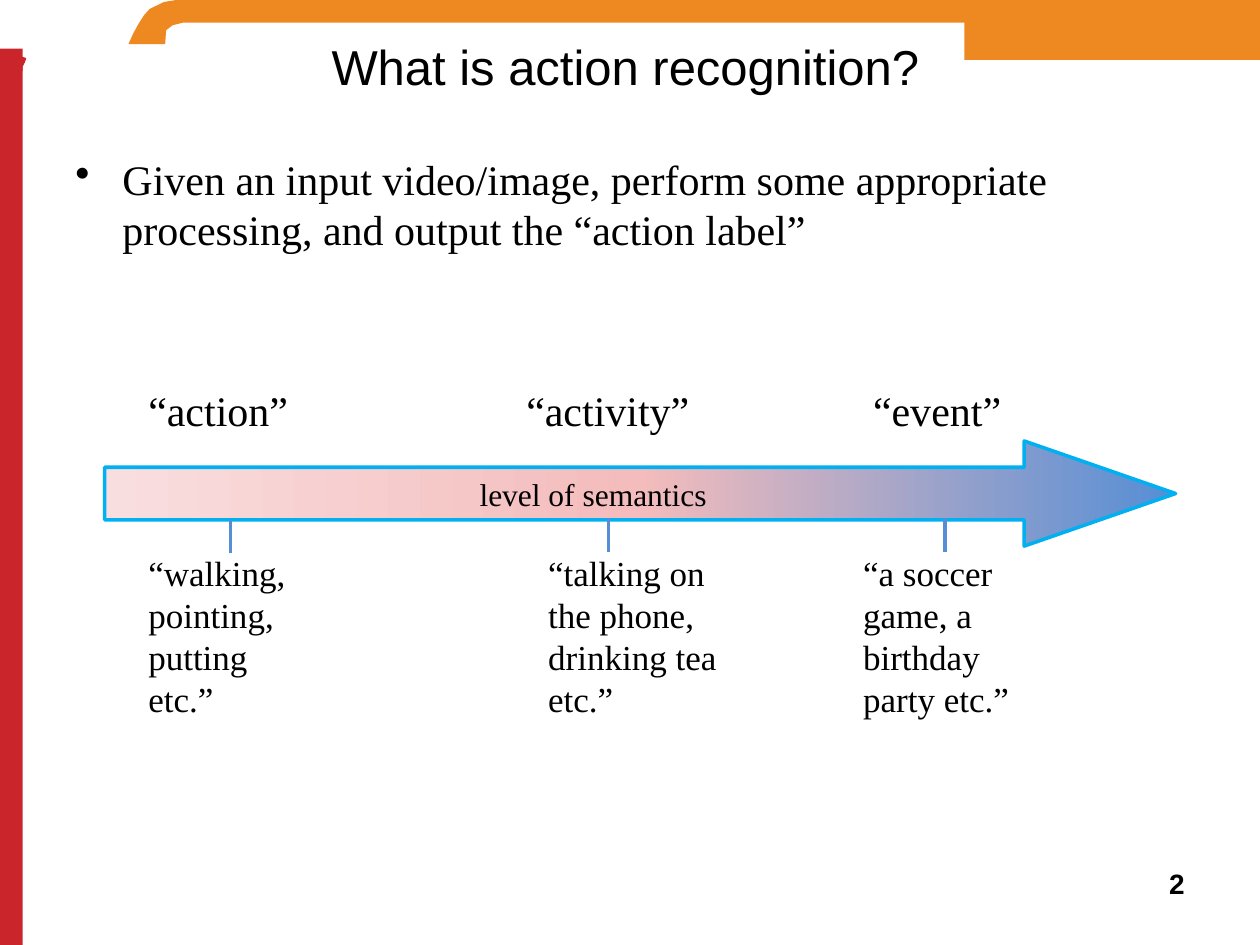
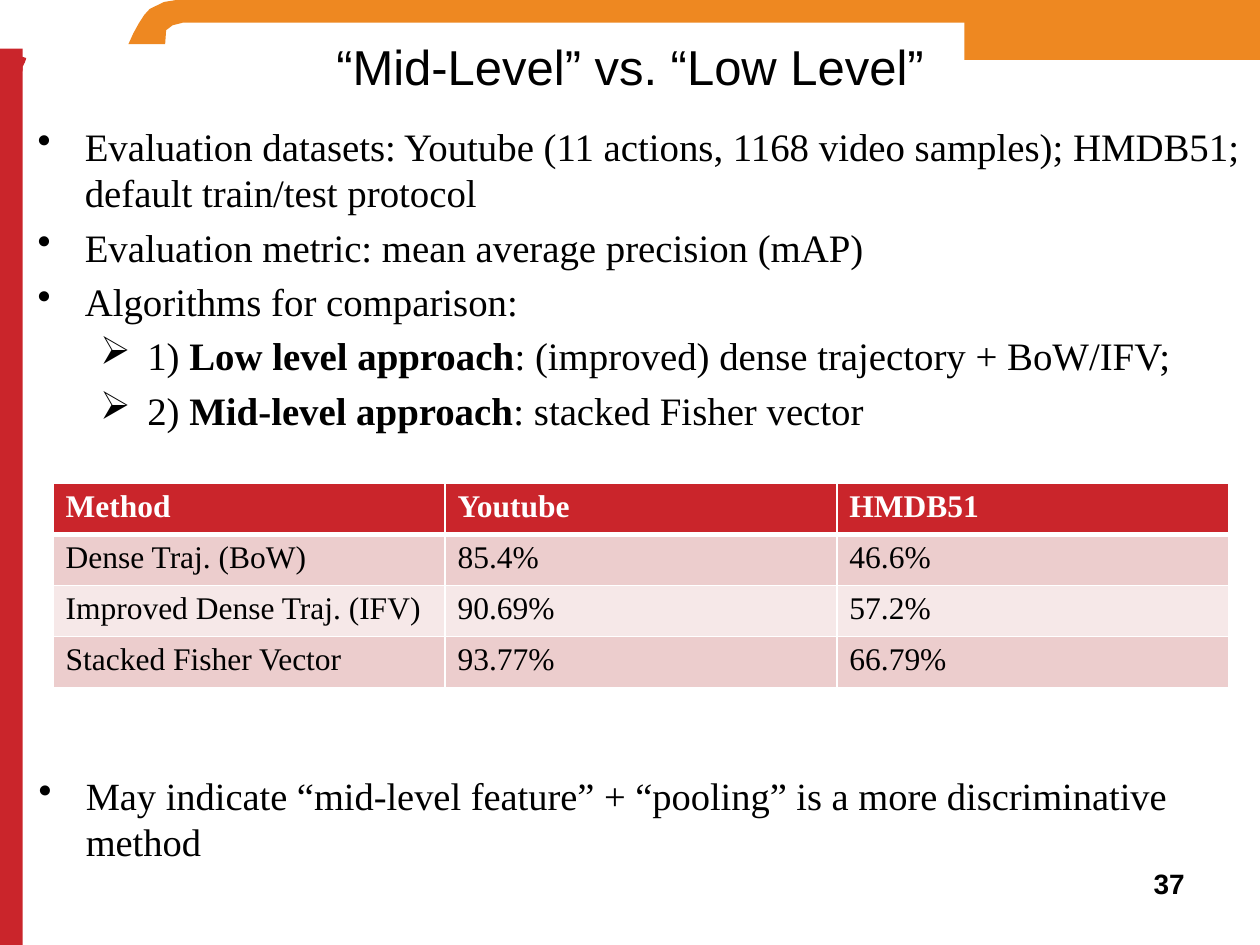
"""Build two slides on action recognition."""
from copy import deepcopy

from lxml import etree
from pptx import Presentation, util as u
from pptx.dml.color import RGBColor
from pptx.enum import shapes as sh, text as tx
from pptx.oxml.ns import qn

HUES = {"orange": "EE8821", "red": "CA252B", "white": "FFFFFF", "black": "000000",
        "blue": "558ED5", "pink": "F4BCBC", "pale": "F9DEDF", "cyan": "00B0F0",
        "dark": "ECCDCD", "light": "F6E8E8"}
SERIF, SANS = "Times New Roman", "Arial"

BARS = [("orange", (19.44, 0, 5.96, 1.21)),
        ("red", (0, 0.98, 0.46, 18.07)),
        ("orange", (3.54, 0, 21.86, 0.46))]
CURVES = [("orange", [(259, 89), (269, 67), (280, 47), (291, 30), (302, 18), (331, 4),
                      (356, 0), (368, 46), (348, 51), (335, 61), (333, 89)]),
          ("red", [(43, 152), (48, 135), (53, 117), (43, 114)]),
          ("white", [(53, 122), (50, 127), (46, 135), (46, 147)])]

GOAL = [("•", ["Given an input video/image, perform some appropriate processing, "
               "and output the “action label”"])]
LEVELS = [
    {"name": "“action”", "left": 2.74, "note": 2.74, "wide": 3.81,
     "text": ["“walking, pointing,", "putting", "etc.”"], "tick": (4.65, 10.49, 11.15)},
    {"name": "“activity”", "left": 10.36, "note": 10.8, "wide": 4.24,
     "text": ["“talking on the phone, drinking tea", "etc.”"], "tick": (12.27, 10.44, 11.13)},
    {"name": "“event”", "left": 17.35, "note": 17.15, "wide": 3.81,
     "text": ["“a soccer game, a birthday party etc.”"], "tick": (19.05, 10.44, 11.13)},
]
BLEND = [(0, "blue"), (0.5, "pink"), (1, "pale")]

SETUP = [
    ("•", ["Evaluation datasets: Youtube (11 actions, 1168 video samples); HMDB51; "
           "default train/test protocol"]),
    ("•", ["Evaluation metric: mean average precision (mAP)"]),
    ("•", ["Algorithms for comparison:"]),
    ("➢", ["1) ", "Low level approach", ": (improved) dense trajectory + BoW/IFV;"]),
    ("➢", ["2) ", "Mid-level approach", ": stacked Fisher vector"]),
]
SCORES = [("Method", "Youtube", "HMDB51"),
          ("Dense Traj. (BoW)", "85.4%", "46.6%"),
          ("Improved Dense Traj. (IFV)", "90.69%", "57.2%"),
          ("Stacked Fisher Vector", "93.77%", "66.79%")]
CLAIM = [("•", ["May indicate “mid-level feature” + “pooling” is a more "
                "discriminative method"])]


def rgb(hue):
    return RGBColor.from_string(HUES[hue])


def cm(*vals):
    return [u.Cm(v) for v in vals]


def paint(shape, hue):
    shape.shadow.inherit = False
    shape.fill.solid()
    shape.fill.fore_color.rgb = rgb(hue)
    shape.line.fill.background()


def style(para, size, face=SERIF, hue="black", bold=False):
    font = para.font
    font.size, font.name, font.bold = u.Pt(size), face, bold
    font.color.rgb = rgb(hue)


def frame(slide, box):
    body = slide.shapes.add_textbox(*cm(*box)).text_frame
    body.word_wrap = True
    return body


def write(slide, box, lines, size, face=SERIF, align="LEFT", bold=False):
    body = frame(slide, box)
    body.text = "\n".join(lines)
    for para in body.paragraphs:
        para.alignment = tx.PP_ALIGN[align]
        style(para, size, face, bold=bold)
    return body


def bullets(slide, box, items, size):
    body = frame(slide, box)
    for i, (mark, parts) in enumerate(items):
        para = body.add_paragraph() if i else body.paragraphs[0]
        if i:
            para.space_before = u.Pt(size * 0.2)
        props = para._p.get_or_add_pPr()
        props.set("marL", str(u.Cm(0.95 if mark == "•" else 2.21)))
        props.set("indent", str(u.Cm(-0.95)))
        etree.SubElement(props, qn("a:buChar")).set("char", mark)
        style(para, size)
        for j, part in enumerate(parts):
            run = para.add_run()
            run.text = part
            if j == 1:
                run.font.bold = True


def start(deck, title, box, page):
    slide = deck.slides.add_slide(deck.slide_layouts[6])
    for hue, bar in BARS:
        paint(slide.shapes.add_shape(sh.MSO_SHAPE.RECTANGLE, *cm(*bar)), hue)
    for hue, pts in CURVES:
        path = slide.shapes.build_freeform(*pts[0], scale=u.Cm(0.01))
        path.add_line_segments(pts[1:])
        paint(path.convert_to_shape(), hue)
    head = write(slide, box, [title], 28, SANS, "CENTER")
    head.margin_left = head.margin_right = u.Cm(0.1)
    head.margin_top = head.margin_bottom = u.Cm(0.05)
    head.vertical_anchor = tx.MSO_ANCHOR.MIDDLE
    write(slide, (18.21, 17.35, 5.92, 1.32), [page], 16, SANS, "RIGHT", True)
    return slide


def arrow(slide):
    shape = slide.shapes.add_shape(sh.MSO_SHAPE.RIGHT_ARROW, *cm(2.11, 8.89, 21.59, 2.12))
    shape.shadow.inherit = False
    shape.adjustments[0], shape.adjustments[1] = 0.5, 1.44
    shape.fill.gradient()
    shape.fill.gradient_angle = 180
    stops = shape._element.spPr.find(".//" + qn("a:gsLst"))
    stops.insert(1, deepcopy(stops[0]))
    for stop, (pos, hue) in zip(shape.fill.gradient_stops, BLEND):
        stop.position, stop.color.rgb = pos, rgb(hue)
    shape.line.color.rgb, shape.line.width = rgb("cyan"), u.Pt(2)


def tick(slide, x, top, end):
    line = slide.shapes.add_connector(sh.MSO_CONNECTOR.STRAIGHT, *cm(x, top, x, end))
    line.line.color.rgb, line.line.width = rgb("blue"), u.Pt(1.75)
    etree.SubElement(line._element.spPr, qn("a:effectLst"))


def edge(cell, side, width):
    line = etree.SubElement(cell._tc.get_or_add_tcPr(), qn("a:ln" + side), w=str(u.Pt(width)))
    fill = etree.SubElement(line, qn("a:solidFill"))
    etree.SubElement(fill, qn("a:srgbClr"), val=HUES["white"])


def grid(slide, rows):
    table = slide.shapes.add_table(len(rows), len(rows[0]),
                                   *cm(1.07, 9.74, 23.7, 4.12)).table
    for i, row in enumerate(rows):
        table.rows[i].height = u.Cm(1.03)
        for j, val in enumerate(row):
            cell = table.cell(i, j)
            for side in "LRTB":
                thick = (i, side) in ((0, "B"), (1, "T"))
                edge(cell, side, 3 if thick else 1)
            cell.fill.solid()
            cell.fill.fore_color.rgb = rgb("red" if i == 0 else "dark" if i % 2 else "light")
            cell.text = val
            style(cell.text_frame.paragraphs[0], 18,
                  hue="black" if i else "white", bold=i == 0)


def main():
    deck = Presentation()
    deck.slide_width, deck.slide_height = cm(25.4, 19.05)

    slide = start(deck, "What is action recognition?", (3.45, 0.76, 18.31, 1.14), "2")
    bullets(slide, (1.27, 2.97, 22.86, 3.61), GOAL, 24)
    arrow(slide)
    write(slide, (9.32, 9.45, 5.28, 1.02), ["level of semantics"], 18, align="CENTER")
    for lev in LEVELS:
        write(slide, (lev["left"], 7.62, 3.81, 1.27), [lev["name"]], 24)
        write(slide, (lev["note"], 11, lev["wide"], 3.68), lev["text"], 20)
        tick(slide, *lev["tick"])

    slide = start(deck, "“Mid-Level” vs. “Low Level”", (0, 0.76, 25.4, 1.14), "37")
    grid(slide, SCORES)
    bullets(slide, (0.51, 2.34, 24.87, 6.55), SETUP, 22.2)
    bullets(slide, (0.53, 15.44, 24.87, 2.34), CLAIM, 22)
    deck.save("out.pptx")


if __name__ == "__main__":
    main()
